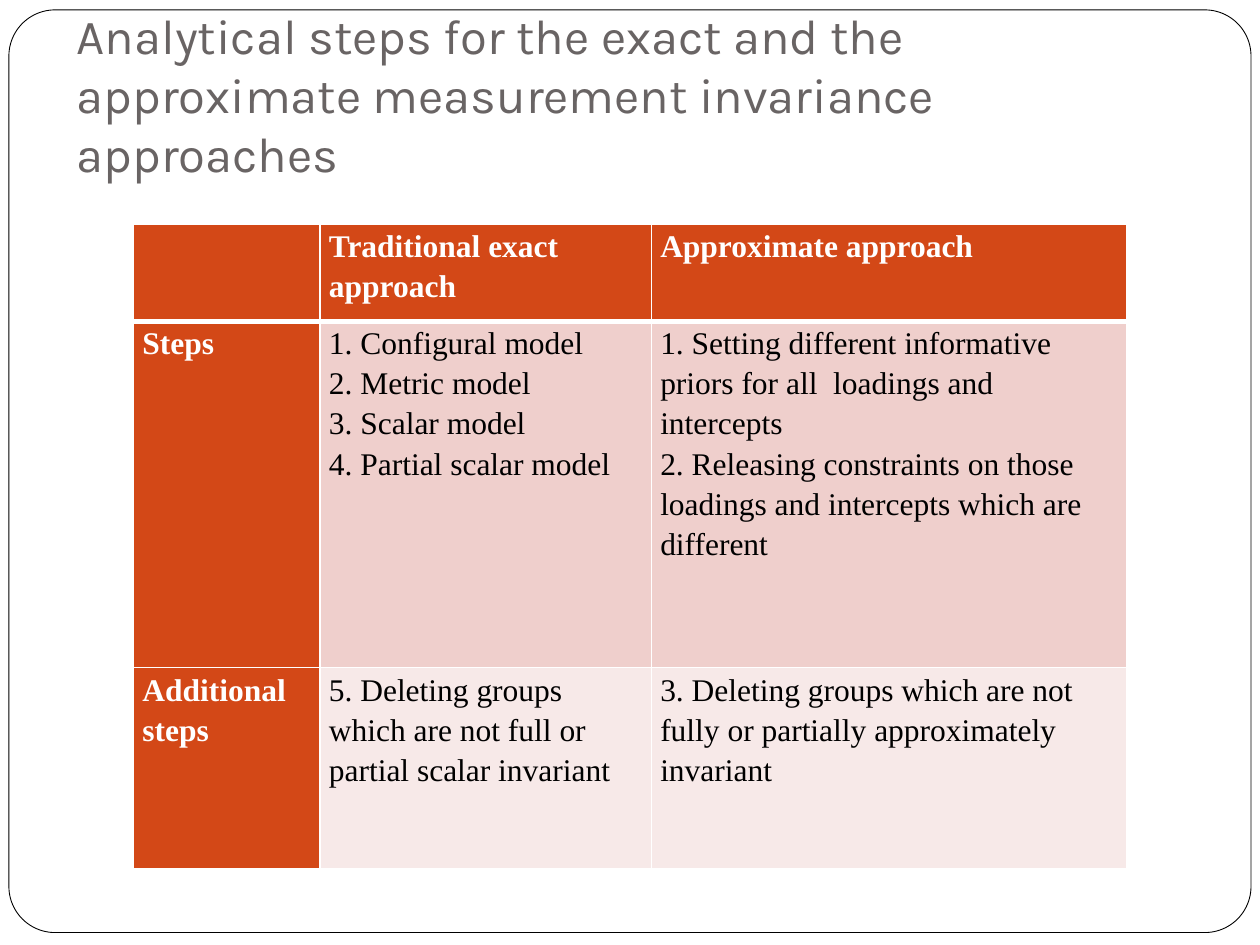
import pptx
import pptx.dml.color
import pptx.enum.shapes
import pptx.enum.text
import pptx.util
from lxml import etree
from pptx.oxml.ns import qn

Cm, Pt = pptx.util.Cm, pptx.util.Pt
RGB = pptx.dml.color.RGBColor.from_string
COLORS = {
    "white": "FFFFFF",
    "black": "000000",
    "title": "696464",
    "header": "D34817",
    "steps": "EFCFCC",
    "additional": "F7E9E8",
}


def write(text_frame, lines, *, font, size, color, bold=False, spacing=None):
    text_frame.word_wrap = True
    text_frame.text = "\n".join(lines)
    for paragraph in text_frame.paragraphs:
        paragraph.alignment = pptx.enum.text.PP_ALIGN.LEFT
        paragraph.line_spacing = spacing
        for run in paragraph.runs:
            run.font.name = font
            run.font.size = Pt(size)
            run.font.bold = bold
            run.font.color.rgb = RGB(COLORS[color])


def add_border(cell, side, width):
    line = etree.SubElement(cell._tc.get_or_add_tcPr(), qn(f"a:ln{side}"), w=str(Pt(width)))
    fill = etree.SubElement(line, qn("a:solidFill"))
    etree.SubElement(fill, qn("a:srgbClr"), val=COLORS["white"])


presentation = pptx.Presentation()
presentation.slide_width, presentation.slide_height = Cm(25.4), Cm(19.05)
slide = presentation.slides.add_slide(presentation.slide_layouts[5])

# Title
title = slide.shapes.title
title.left, title.top, title.width, title.height = Cm(1.3), Cm(0.74), Cm(22.83), Cm(3.18)
write(title.text_frame,
      ["Analytical steps for the exact and the approximate measurement invariance approaches"],
      font="Karla", size=28, color="title")
title.text_frame.auto_size = pptx.enum.text.MSO_AUTO_SIZE.NONE
title.text_frame.vertical_anchor = pptx.enum.text.MSO_ANCHOR.BOTTOM
title.text_frame.margin_left = title.text_frame.margin_right = Cm(0.25)
title.text_frame.margin_top, title.text_frame.margin_bottom = Cm(0.13), Cm(0.25)

# Rounded page frame, behind the title
frame = slide.shapes.add_shape(pptx.enum.shapes.MSO_SHAPE.ROUNDED_RECTANGLE,
                               Cm(0.18), Cm(0.2), Cm(25.04), Cm(18.6))
frame.adjustments[0] = 0.05
frame.shadow.inherit = False
frame.fill.solid()
frame.fill.fore_color.rgb = RGB(COLORS["white"])
frame.line.color.rgb = RGB(COLORS["black"])
frame.line.width = Pt(0.5)
title._element.addprevious(frame._element)

# Comparison of the two approaches
column_widths = [3.76, 6.68, 9.58]
row_heights = [1.96, 6.98, 4.06]
row_fills = ["header", "steps", "additional"]
approaches = [
    [[], ["Traditional exact approach"], ["Approximate approach"]],
    [["Steps"],
     ["1. Configural model", "2. Metric model", "3. Scalar model", "4. Partial scalar model"],
     ["1. Setting different informative priors for all  loadings and intercepts",
      "2. Releasing constraints on those loadings and intercepts which are different"]],
    [["Additional steps"],
     ["5. Deleting groups which are not full or partial scalar invariant"],
     ["3. Deleting groups which are not fully or partially approximately invariant"]],
]
comparison = slide.shapes.add_table(3, 3, Cm(2.69), Cm(4.52),
                                    Cm(sum(column_widths)), Cm(sum(row_heights))).table
comparison.first_col = True
comparison.horz_banding = False
for column, width in zip(comparison.columns, column_widths):
    column.width = Cm(width)

for r, steps_by_approach in enumerate(approaches):
    comparison.rows[r].height = Cm(row_heights[r])
    for c, steps in enumerate(steps_by_approach):
        cell = comparison.cell(r, c)
        is_heading = r == 0 or c == 0
        cell.margin_left = cell.margin_right = Cm(0.18)
        cell.margin_top = cell.margin_bottom = 0
        for side in "LRTB":
            under_header = (r, side) in [(0, "B"), (1, "T")]
            add_border(cell, side, 3 if under_header else 1)
        cell.fill.solid()
        cell.fill.fore_color.rgb = RGB(COLORS["header" if is_heading else row_fills[r]])
        write(cell.text_frame, steps, font="Times New Roman", size=18, spacing=1.15,
              color="white" if is_heading else "black", bold=is_heading)

presentation.save("out.pptx")
